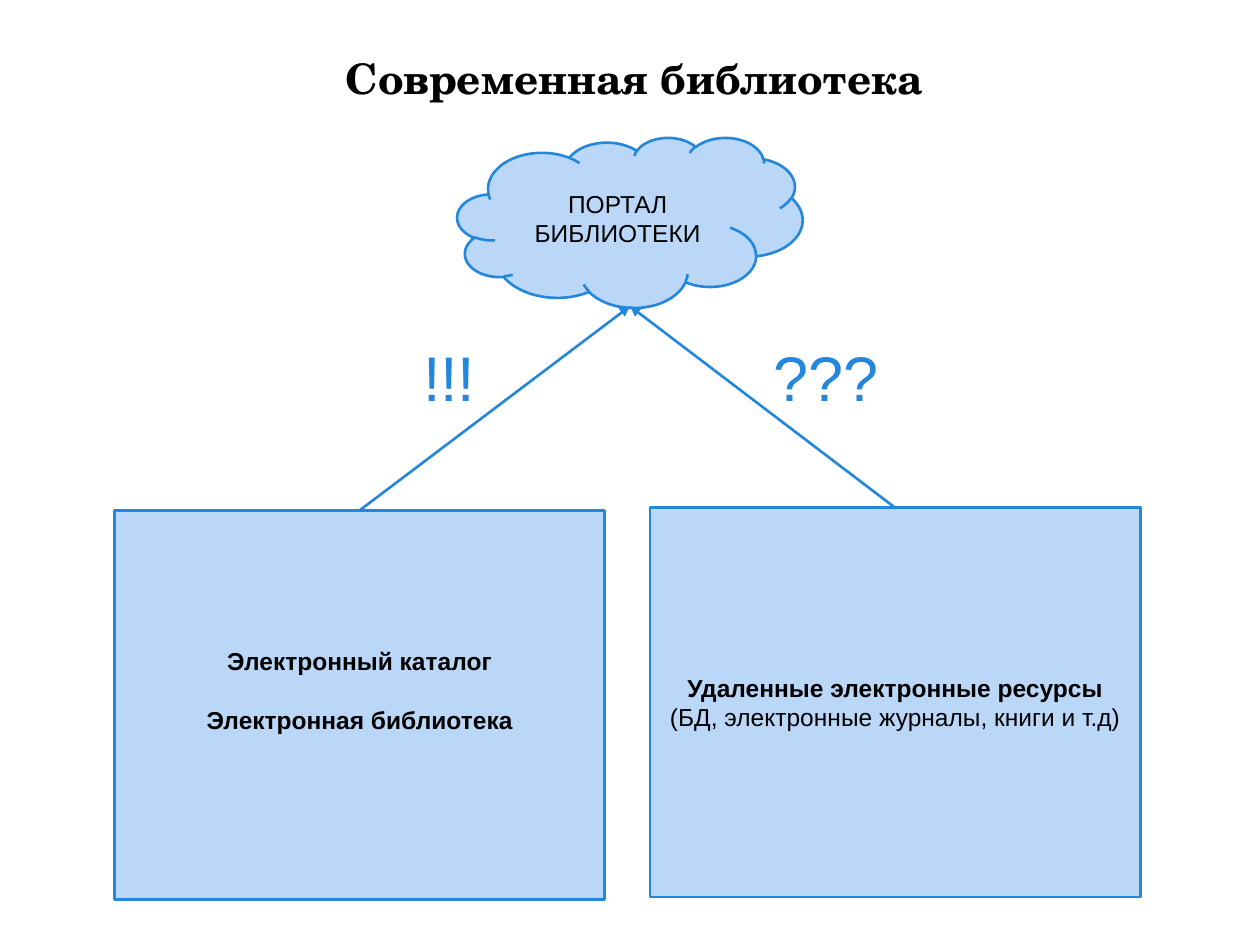
import pptx
import pptx.util
import pptx.dml.color
import pptx.enum.shapes
import pptx.enum.text
import pptx.oxml.ns
import lxml.etree

Inches = pptx.util.Inches
Pt = pptx.util.Pt
SHAPES = pptx.enum.shapes.MSO_SHAPE
ALIGN = pptx.enum.text.PP_ALIGN
ANCHOR = pptx.enum.text.MSO_ANCHOR

COLORS = {"text": "000000", "fill": "BBD7F8", "accent": "2388DB"}
INSET = 0.1
BOX_W, BOX_H = 3.89, 3.09
MARK_Y, MARK_W, MARK_H = 2.59, 1.47, 0.82


def rgb(name):
    return pptx.dml.color.RGBColor.from_string(COLORS[name])


def set_frame(tf, anchor, bottom=INSET):
    tf.word_wrap = True
    tf.vertical_anchor = anchor
    tf.margin_left = tf.margin_right = tf.margin_top = Inches(INSET)
    tf.margin_bottom = Inches(bottom)


def write(p, text, size, bold=False, color="text", font="Arial", align=ALIGN.CENTER):
    p.alignment = align
    r = p.add_run()
    r.text = text
    r.font.size = Pt(size)
    r.font.bold = bold
    r.font.name = font
    r.font.color.rgb = rgb(color)


def add_label(s, x, y, w, h, text, size, **style):
    tb = s.shapes.add_textbox(Inches(x), Inches(y), Inches(w), Inches(h))
    set_frame(tb.text_frame, ANCHOR.TOP)
    p = tb.text_frame.paragraphs[0]
    write(p, text, size, **style)
    return p


def add_node(s, kind, x, y, w, h, lines, gap=0, bottom=INSET):
    sp = s.shapes.add_shape(kind, Inches(x), Inches(y), Inches(w), Inches(h))
    sp.shadow.inherit = False
    sp.fill.solid()
    sp.fill.fore_color.rgb = rgb("fill")
    sp.line.color.rgb = rgb("accent")
    sp.line.width = Pt(1.5)
    tf = sp.text_frame
    set_frame(tf, ANCHOR.MIDDLE, bottom)
    for i, (text, bold) in enumerate(lines):
        p = tf.add_paragraph() if i else tf.paragraphs[0]
        if i:
            p.space_before = Pt(gap)
        write(p, text, 14, bold)
    return sp


def add_arrow(s, box, x, y):
    cxn = s.shapes.add_connector(
        pptx.enum.shapes.MSO_CONNECTOR.STRAIGHT,
        box.left + box.width // 2, box.top, Inches(x), Inches(y))
    cxn.begin_connect(box, 0)
    cxn.line.color.rgb = rgb("accent")
    cxn.line.width = Pt(1.5)
    qn = pptx.oxml.ns.qn
    ln = cxn.line._get_or_add_ln()
    lxml.etree.SubElement(ln, qn("a:tailEnd"), type="triangle")
    lxml.etree.SubElement(cxn._element.spPr, qn("a:effectLst"))


def main():
    prs = pptx.Presentation()
    prs.slide_width, prs.slide_height = Inches(10), Inches(7.5)
    s = prs.slides.add_slide(prs.slide_layouts[6])

    title = add_label(s, 0.18, 0.26, 9.71, 0.67, "Современная библиотека", 24,
                      bold=True, font="TeX Gyre Schola")
    title.line_spacing = 1.15

    local = add_node(s, SHAPES.RECTANGLE, 0.91, 4.05, BOX_W, BOX_H,
                     [("Электронный каталог", True), ("Электронная библиотека", True)],
                     gap=17, bottom=0.33)
    remote = add_node(s, SHAPES.RECTANGLE, 5.16, 4.03, BOX_W, BOX_H,
                      [("Удаленные электронные ресурсы", True),
                       ("(БД, электронные журналы, книги и т.д)", False)])
    add_node(s, SHAPES.CLOUD, 3.63, 1.09, 2.74, 1.35, [("ПОРТАЛ БИБЛИОТЕКИ", False)])

    for box in (local, remote):
        add_arrow(s, box, 5, 2.43)
    for x, mark in ((6.04, "???"), (3.26, "!!!")):
        add_label(s, x, MARK_Y, MARK_W, MARK_H, mark, 36, color="accent", align=ALIGN.LEFT)

    prs.save("out.pptx")


if __name__ == "__main__":
    main()
